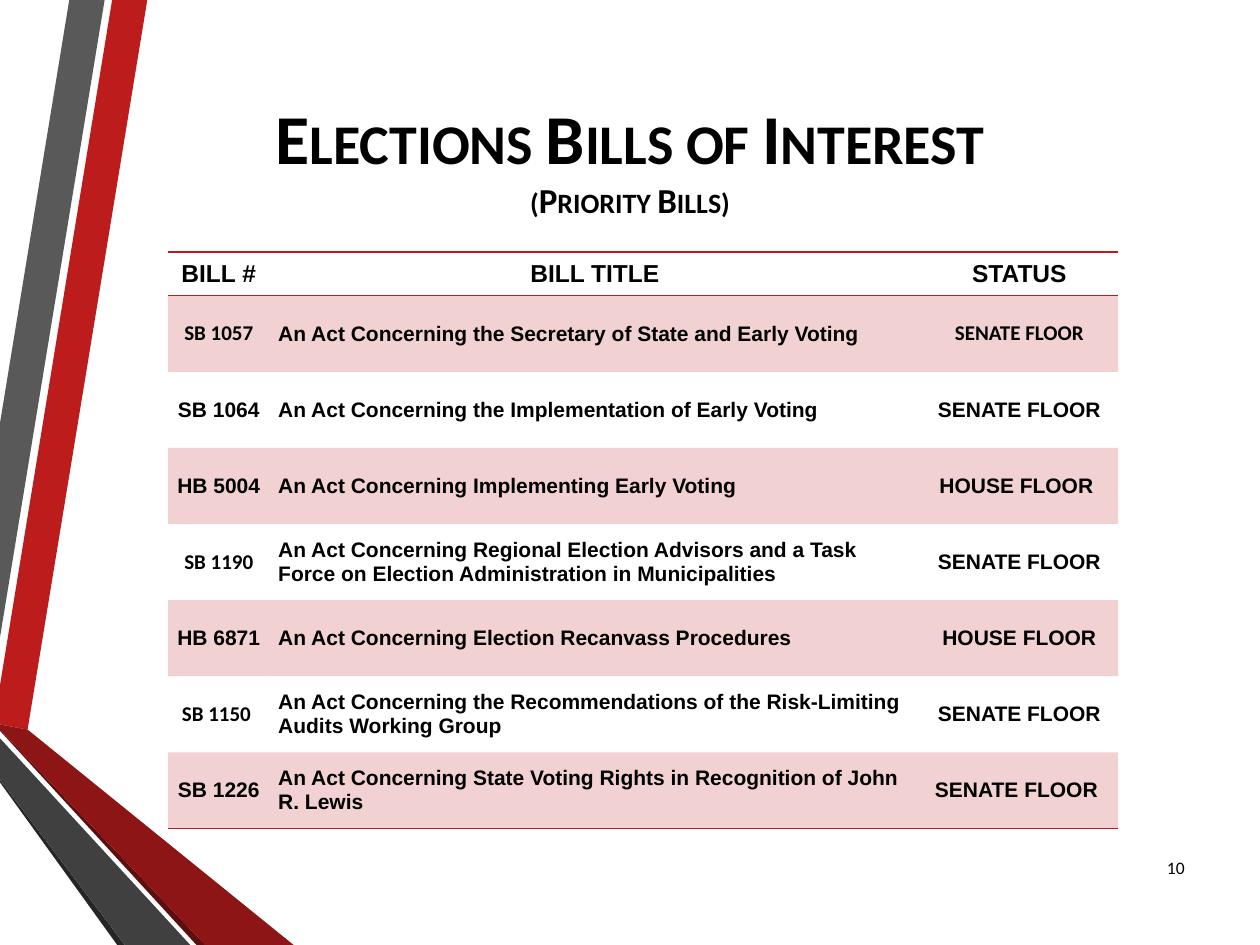
"""Build the slide of priority elections bills."""
from copy import deepcopy
from dataclasses import dataclass

from lxml.etree import SubElement
from pptx import Presentation
from pptx.dml.color import RGBColor
from pptx.enum.text import MSO_ANCHOR, MSO_AUTO_SIZE, PP_ALIGN
from pptx.oxml import parse_xml
from pptx.oxml.ns import nsdecls, qn
from pptx.util import Pt


@dataclass(frozen=True)
class Theme:
    red: str = "BC1C1C"
    black: str = "000000"
    head_font: str = "Calibri"
    body_font: str = "Arial"
    title: int = 40
    subtitle: int = 20
    header: int = 14
    body: int = 12
    number: int = 10
    tint: int = 20


@dataclass(frozen=True)
class Band:
    color: str
    points: tuple


@dataclass(frozen=True)
class Bill:
    number: str
    title: str
    status: str
    number_font: str = "Arial"
    status_font: str = "Arial"


T = Theme()
NO_STYLE = "{2D5ABB26-0587-4C30-8999-92F81FD0307C}"
COLS = (58, 372, 113)
HEADER_H, ROW_H = 25, 43.5
HEADERS = ("BILL #", "BILL TITLE", "STATUS")
BANDS = (
    Band(T.red, ((0, 391.7), (0, 414), (15.8, 416.9), (84.2, 0), (64.1, 0))),
    Band("595959", ((59.8, 0), (39.6, 0), (0, 241.9), (0, 364.3))),
    Band("262626", ((0, 445.7), (0, 447.1), (67, 540), (71.3, 540))),
    Band("5E0E0E", ((0, 416.9), (0, 417.6), (112.3, 540), (117.4, 540))),
    Band("8D1515", ((0, 416.9), (117.4, 540), (167.8, 540), (15.8, 416.9), (0, 414))),
    Band("404040", ((0, 445.7), (71.3, 540), (108.7, 540), (0, 421.9))),
)
BILLS = (
    Bill("SB 1057", "An Act Concerning the Secretary of State and Early Voting",
         "SENATE FLOOR", T.head_font, T.head_font),
    Bill("SB 1064", "An Act Concerning the Implementation of Early Voting", "SENATE FLOOR"),
    Bill("HB 5004", "An Act Concerning Implementing Early Voting", "HOUSE FLOOR "),
    Bill("SB 1190", "An Act Concerning Regional Election Advisors and a Task Force on "
         "Election Administration in Municipalities", "SENATE FLOOR", T.head_font),
    Bill("HB 6871", "An Act Concerning Election Recanvass Procedures", "HOUSE FLOOR"),
    Bill("SB 1150 ", "An Act Concerning the Recommendations of the Risk-Limiting Audits "
         "Working Group", "SENATE FLOOR", T.head_font),
    Bill("SB 1226", "An Act Concerning State Voting Rights in Recognition of John R. Lewis",
         "SENATE FLOOR "),
)


def style_run(r, size: int, font: str, bold: bool = True) -> None:
    """Set the type of one run."""
    r.font.size, r.font.name, r.font.bold = Pt(size), font, bold
    r.font.color.rgb = RGBColor.from_string(T.black)


def add_band(s, band: Band) -> None:
    """Draw one ribbon of the corner decoration."""
    start, *rest = [(Pt(x), Pt(y)) for x, y in band.points]
    builder = s.shapes.build_freeform(*start)
    builder.add_line_segments(rest, close=True)
    sp = builder.convert_to_shape()
    sp.shadow.inherit = False
    sp.fill.solid()
    sp.fill.fore_color.rgb = RGBColor.from_string(band.color)
    sp.line.fill.background()


def add_title(s) -> None:
    """Fill the title placeholder with the title and subtitle lines."""
    sp = s.shapes.title
    s.shapes._spTree.append(sp._element)
    sp.left, sp.top, sp.width, sp.height = Pt(72), Pt(36), Pt(576), Pt(108)
    tf = sp.text_frame
    tf.auto_size, tf.vertical_anchor = MSO_AUTO_SIZE.NONE, MSO_ANCHOR.MIDDLE
    p = tf.paragraphs[0]
    p.text = "Elections Bills of Interest\v(Priority Bills)"
    p.alignment = PP_ALIGN.CENTER
    for r, size in zip(p.runs, (T.title, T.subtitle)):
        style_run(r, size, T.head_font)
        r._r.get_or_add_rPr().set("cap", "small")
    p._p.find(qn("a:br")).append(deepcopy(p.runs[0]._r.rPr))


def fill_cell(cell, text: str, size: int, font: str, align, tinted: bool,
              edges: tuple) -> None:
    """Write one table cell with its fill and ruled edges."""
    cell.margin_left = cell.margin_right = Pt(5)
    cell.margin_top = cell.margin_bottom = 0
    cell.vertical_anchor = MSO_ANCHOR.MIDDLE
    p = cell.text_frame.paragraphs[0]
    p.text, p.alignment = text, align
    style_run(p.runs[0], size, font)
    tcPr = cell._tc.get_or_add_tcPr()
    if tinted:
        cell.fill.solid()
        cell.fill.fore_color.rgb = RGBColor.from_string(T.red)
        SubElement(tcPr.find(f".//{qn('a:srgbClr')}"), qn("a:alpha"), val=str(T.tint * 1000))
    else:
        cell.fill.background()
    for i, edge in enumerate(edges):
        tcPr.insert(i, parse_xml(
            f'<a:{edge} {nsdecls("a")} w="{Pt(1)}"><a:solidFill>'
            f'<a:srgbClr val="{T.red}"/></a:solidFill></a:{edge}>'))


def add_bills(s) -> None:
    """Add the table of bills."""
    heights = [HEADER_H] + [ROW_H] * len(BILLS)
    frame = s.shapes.add_table(len(heights), len(COLS), Pt(96), Pt(144),
                               Pt(sum(COLS)), Pt(sum(heights)))
    table = frame.table
    table.first_row = table.horz_banding = False
    table._tbl.tblPr.find(qn("a:tableStyleId")).text = NO_STYLE
    for col, width in zip(table.columns, COLS):
        col.width = Pt(width)
    for row, height in zip(table.rows, heights):
        row.height = Pt(height)
    for c, text in enumerate(HEADERS):
        fill_cell(table.cell(0, c), text, T.header, T.body_font, PP_ALIGN.CENTER,
                  False, ("lnT", "lnB"))
    for i, bill in enumerate(BILLS, 1):
        edges = ("lnB",) if i == len(BILLS) else ()
        columns = ((bill.number, bill.number_font, PP_ALIGN.CENTER),
                   (bill.title, T.body_font, PP_ALIGN.LEFT),
                   (bill.status, bill.status_font, PP_ALIGN.CENTER))
        for c, (text, font, align) in enumerate(columns):
            fill_cell(table.cell(i, c), text, T.body, font, align, i % 2 == 1, edges)


def add_number(s) -> None:
    """Add the page number."""
    tf = s.shapes.add_textbox(Pt(650), Pt(481), Pt(34), Pt(29)).text_frame
    tf.word_wrap, tf.vertical_anchor = True, MSO_ANCHOR.MIDDLE
    p = tf.paragraphs[0]
    p.text, p.alignment = "10", PP_ALIGN.RIGHT
    style_run(p.runs[0], T.number, T.head_font, bold=False)


def main() -> None:
    """Build and save the slide."""
    prs = Presentation()
    prs.slide_width, prs.slide_height = Pt(720), Pt(540)
    s = prs.slides.add_slide(prs.slide_layouts[5])
    for band in BANDS:
        add_band(s, band)
    add_title(s)
    add_bills(s)
    add_number(s)
    prs.save("out.pptx")


if __name__ == "__main__":
    main()
